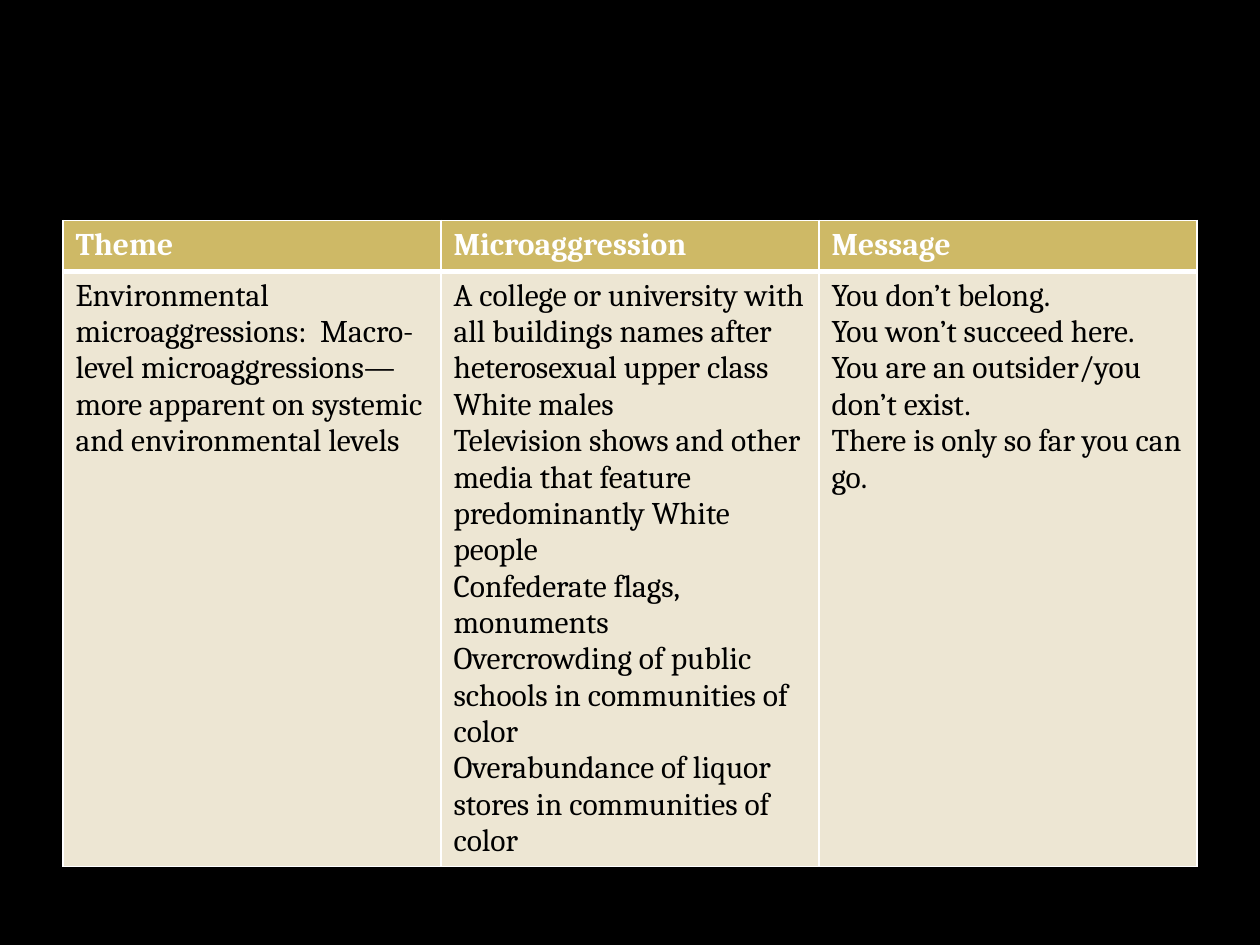
"""Build a slide with a table of environmental microaggressions."""
from dataclasses import dataclass

from lxml.etree import SubElement
from pptx import Presentation
from pptx.dml.color import RGBColor
from pptx.oxml.ns import qn
from pptx.util import Pt


@dataclass(frozen=True)
class Theme:
    back: str = "000000"
    head: str = "CEB966"
    body: str = "EDE6D3"
    light: str = "FFFFFF"
    dark: str = "000000"
    font: str = "Cambria"
    size: float = 18
    thin: float = 1
    thick: float = 3


class Deck:
    def __init__(self, theme, width, height):
        self.theme = theme
        self.file = Presentation()
        self.file.slide_width, self.file.slide_height = Pt(width), Pt(height)
        self.slide = self.file.slides.add_slide(self.file.slide_layouts[6])
        self.paint(self.slide.background.fill, theme.back)

    def paint(self, fill, color):
        fill.solid()
        fill.fore_color.rgb = RGBColor.from_string(color)

    def border(self, cell, top, base):
        props = cell._tc.get_or_add_tcPr()
        thin = self.theme.thin
        for side, width in zip("LRTB", (thin, thin, top, base)):
            line = SubElement(props, qn(f"a:ln{side}"), w=str(Pt(width)))
            fill = SubElement(line, qn("a:solidFill"))
            SubElement(fill, qn("a:srgbClr"), val=self.theme.light)

    def text(self, frame, lines, color, bold):
        for i, line in enumerate(lines):
            para = frame.add_paragraph() if i else frame.paragraphs[0]
            run = para.add_run()
            run.text = line
            font = run.font
            font.name, font.size, font.bold = self.theme.font, Pt(self.theme.size), bold
            font.color.rgb = RGBColor.from_string(color)

    def cell(self, cell, lines, head):
        look = self.theme
        if head:
            self.border(cell, look.thin, look.thick)
        else:
            self.border(cell, look.thick, look.thin)
        self.paint(cell.fill, look.head if head else look.body)
        self.text(cell.text_frame, lines, look.light if head else look.dark, head)

    def table(self, rows, left, top, width, heights):
        shape = self.slide.shapes.add_table(
            len(rows), len(rows[0]), Pt(left), Pt(top), Pt(width), Pt(sum(heights)))
        grid = shape.table
        for r, row in enumerate(rows):
            grid.rows[r].height = Pt(heights[r])
            for c, lines in enumerate(row):
                self.cell(grid.cell(r, c), lines, r == 0)


ROWS = [
    [["Theme"], ["Microaggression"], ["Message"]],
    [
        ["Environmental microaggressions:  Macro-level microaggressions—more "
         "apparent on systemic and environmental levels"],
        ["A college or university with all buildings names after heterosexual "
         "upper class White males",
         "Television shows and other media that feature predominantly White people",
         "Confederate flags, monuments",
         "Overcrowding of public schools in communities of color",
         "Overabundance of liquor stores in communities of color"],
        ["You don’t belong.",
         "You won’t succeed here.",
         "You are an outsider/you don’t exist.",
         "There is only so far you can go."],
    ],
]


def main():
    deck = Deck(Theme(), 720, 540)
    deck.table(ROWS, left=36, top=126, width=648, heights=(29.2, 340))
    deck.file.save("out.pptx")


if __name__ == "__main__":
    main()
